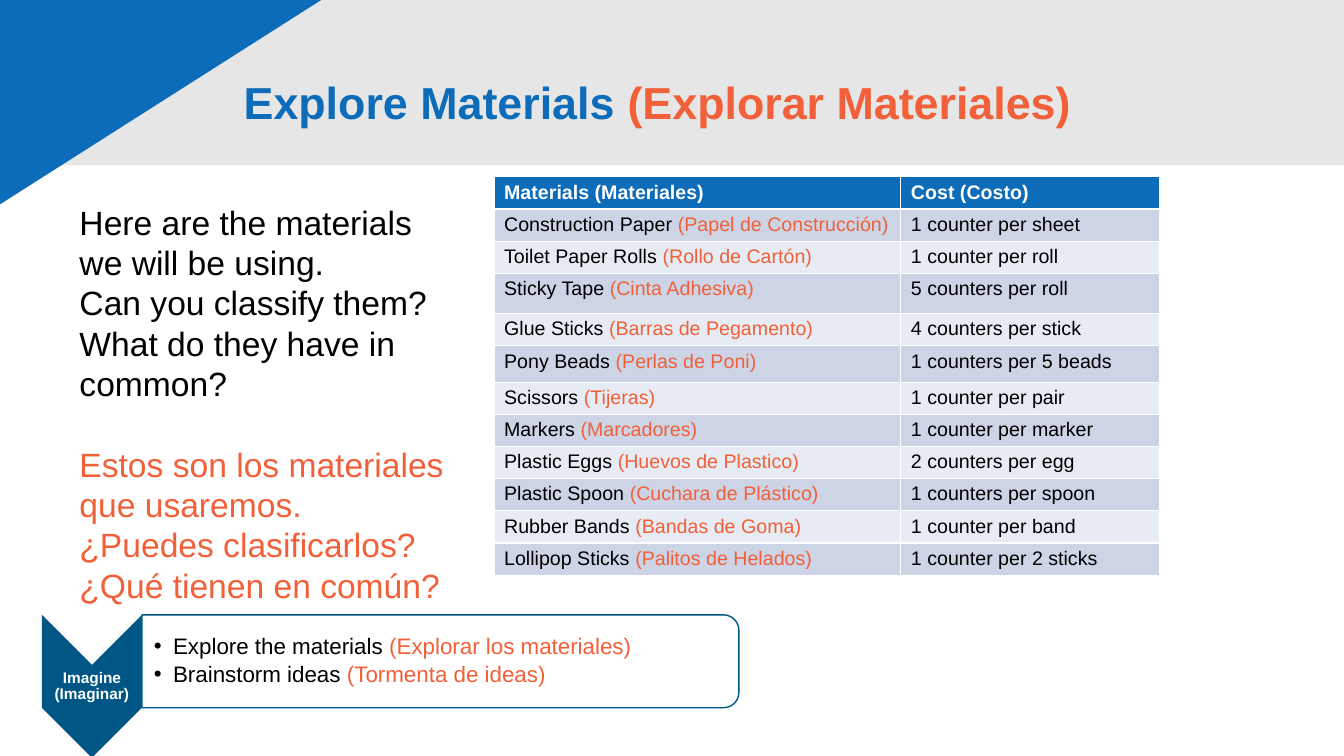
"""Build the bilingual Explore Materials slide."""
from lxml.etree import SubElement
from pptx import Presentation
from pptx.dml.color import RGBColor
from pptx.enum.shapes import MSO_SHAPE
from pptx.enum.text import MSO_ANCHOR, PP_ALIGN
from pptx.oxml.ns import qn
from pptx.util import Pt

BLUE, NAVY, ORANGE = "0D6CB9", "005786", "F16038"
GRAY, BLACK, WHITE = "E7E6E6", "000000", "FFFFFF"
BANDS = ["CCD4E6", "E7EBF3"]

TITLE = ("Explore Materials", "(Explorar Materiales)")
ENGLISH = ["Here are the materials we will be using.", "Can you classify them?",
           "What do they have in common?"]
SPANISH = ["Estos son los materiales que usaremos.", "¿Puedes clasificarlos?",
           "¿Qué tienen en común?"]
STEP = "Imagine (Imaginar)"
TASKS = [("Explore the materials", "(Explorar los materiales)"),
         ("Brainstorm ideas", "(Tormenta de ideas)")]
HEADER = ("Materials (Materiales)", "Cost (Costo)")
MATERIALS = [
    ("Construction Paper", "(Papel de Construcción)", "1 counter per sheet"),
    ("Toilet Paper Rolls", "(Rollo de Cartón)", "1 counter per roll"),
    ("Sticky Tape", "(Cinta Adhesiva)", "5 counters per roll"),
    ("Glue Sticks", "(Barras de Pegamento)", "4 counters per stick"),
    ("Pony Beads", "(Perlas de Poni)", "1 counters per 5 beads"),
    ("Scissors", "(Tijeras)", "1 counter per pair"),
    ("Markers", "(Marcadores)", "1 counter per marker"),
    ("Plastic Eggs", "(Huevos de Plastico)", "2 counters per egg"),
    ("Plastic Spoon", "(Cuchara de Plástico)", "1 counters per spoon"),
    ("Rubber Bands", "(Bandas de Goma)", "1 counter per band"),
    ("Lollipop Sticks", "(Palitos de Helados)", "1 counter per 2 sticks"),
]
COLUMN_WIDTHS = (290.6, 184.8)
ROW_HEIGHT = 23
TALL_ROWS = {3: 28.8, 5: 25.9}


def color(value):
    return RGBColor.from_string(value)


def bilingual(english, spanish):
    return [(english + " ", BLACK), (spanish, ORANGE)]


def write(frame, paragraphs, size, bold=False, align=PP_ALIGN.LEFT, spacing=None,
          after=0, gaps=None, bullet_indent=None, anchor=MSO_ANCHOR.TOP):
    frame.word_wrap = True
    frame.vertical_anchor = anchor
    for index, runs in enumerate(paragraphs):
        paragraph = frame.add_paragraph() if index else frame.paragraphs[0]
        paragraph.alignment = align
        paragraph.line_spacing = spacing
        paragraph.space_before = Pt((gaps or {}).get(index, 0))
        paragraph.space_after = Pt(after)
        if bullet_indent:
            properties = paragraph._p.get_or_add_pPr()
            properties.set("marL", str(Pt(bullet_indent)))
            properties.set("indent", str(-Pt(bullet_indent)))
            SubElement(properties, qn("a:buFont")).set("typeface", "Arial")
            SubElement(properties, qn("a:buChar")).set("char", "•")
        for text, run_color in runs:
            run = paragraph.add_run()
            run.text = text
            run.font.name = "Arial"
            run.font.size = Pt(size)
            run.font.bold = bold
            run.font.color.rgb = color(run_color)


def paint(shape, fill, line=None):
    shape.shadow.inherit = False
    shape.fill.solid()
    shape.fill.fore_color.rgb = color(fill)
    if line:
        shape.line.color.rgb = color(line)
        shape.line.width = Pt(1)
    else:
        shape.line.fill.background()


def add_box(slide, left, top, width, height):
    return slide.shapes.add_textbox(Pt(left), Pt(top), Pt(width), Pt(height)).text_frame


def add_turned(slide, kind, left, top, width, height):
    """Add a shape turned a quarter clockwise that covers the given area."""
    shift = (width - height) / 2
    shape = slide.shapes.add_shape(kind, Pt(left + shift), Pt(top - shift),
                                   Pt(height), Pt(width))
    shape.rotation = 90
    return shape


def add_step(slide):
    left, top, width, side, point = 30, 439.2, 71.4, 66.4, 35.7
    right, middle, bottom = left + width, left + width / 2, top + side
    corners = [(right, bottom), (middle, bottom + point), (left, bottom),
               (left, top), (middle, top + point)]
    builder = slide.shapes.build_freeform(Pt(right), Pt(top))
    builder.add_line_segments([(Pt(x), Pt(y)) for x, y in corners], close=True)
    arrow = builder.convert_to_shape()
    paint(arrow, NAVY)
    frame = arrow.text_frame
    frame.margin_left = frame.margin_right = Pt(0.7)
    frame.margin_top = frame.margin_bottom = Pt(33.8)
    write(frame, [[(STEP, WHITE)]], 11, bold=True, align=PP_ALIGN.CENTER,
          spacing=0.9, anchor=MSO_ANCHOR.MIDDLE)

    area = (right, top, 426.4, side)
    paint(add_turned(slide, MSO_SHAPE.ROUND_2_SAME_RECTANGLE, *area), WHITE, NAVY)
    frame = add_box(slide, *area)
    frame.margin_left = Pt(8.6)
    write(frame, [bilingual(*task) for task in TASKS], 16, spacing=0.9, after=3,
          bullet_indent=13.7, anchor=MSO_ANCHOR.MIDDLE)


def add_materials(slide):
    heights = [TALL_ROWS.get(row, ROW_HEIGHT) for row in range(len(MATERIALS) + 1)]
    table = slide.shapes.add_table(len(heights), 2, Pt(352.9), Pt(126.3),
                                   Pt(sum(COLUMN_WIDTHS)), Pt(sum(heights))).table
    for column, width in zip(table.columns, COLUMN_WIDTHS):
        column.width = Pt(width)
    contents = [[[(label, WHITE)] for label in HEADER]]
    contents += [[bilingual(english, spanish), [(cost, BLACK)]]
                 for english, spanish, cost in MATERIALS]
    for index, (height, row) in enumerate(zip(heights, contents)):
        table.rows[index].height = Pt(height)
        for column, runs in enumerate(row):
            cell = table.cell(index, column)
            cell.margin_top, cell.margin_bottom = Pt(3.2), Pt(2.8)
            cell.fill.solid()
            cell.fill.fore_color.rgb = color(BANDS[(index - 1) % 2] if index else BLUE)
            write(cell.text_frame, [runs], 14, bold=index == 0)


def main():
    presentation = Presentation()
    presentation.slide_width, presentation.slide_height = Pt(960), Pt(540)
    slide = presentation.slides.add_slide(presentation.slide_layouts[6])

    band = slide.shapes.add_shape(MSO_SHAPE.RECTANGLE, Pt(-18.7), Pt(-13.7),
                                  Pt(978.7), Pt(131.8))
    paint(band, GRAY)
    corner = add_turned(slide, MSO_SHAPE.RIGHT_TRIANGLE, -185, -123.8, 609.1, 387.4)
    paint(corner, BLUE)
    add_step(slide)

    lines = [[(text, BLACK)] for text in ENGLISH] + [[(text, ORANGE)] for text in SPANISH]
    write(add_box(slide, 49.7, 140.4, 288.7, 295), lines, 24,
          gaps={len(ENGLISH): 28.8})
    write(add_box(slide, 167, 23, 698.4, 104.4),
          [[(TITLE[0] + " ", BLUE), (TITLE[1], ORANGE)]], 32, bold=True,
          spacing=0.9, anchor=MSO_ANCHOR.MIDDLE)
    add_materials(slide)
    presentation.save("out.pptx")


if __name__ == "__main__":
    main()
